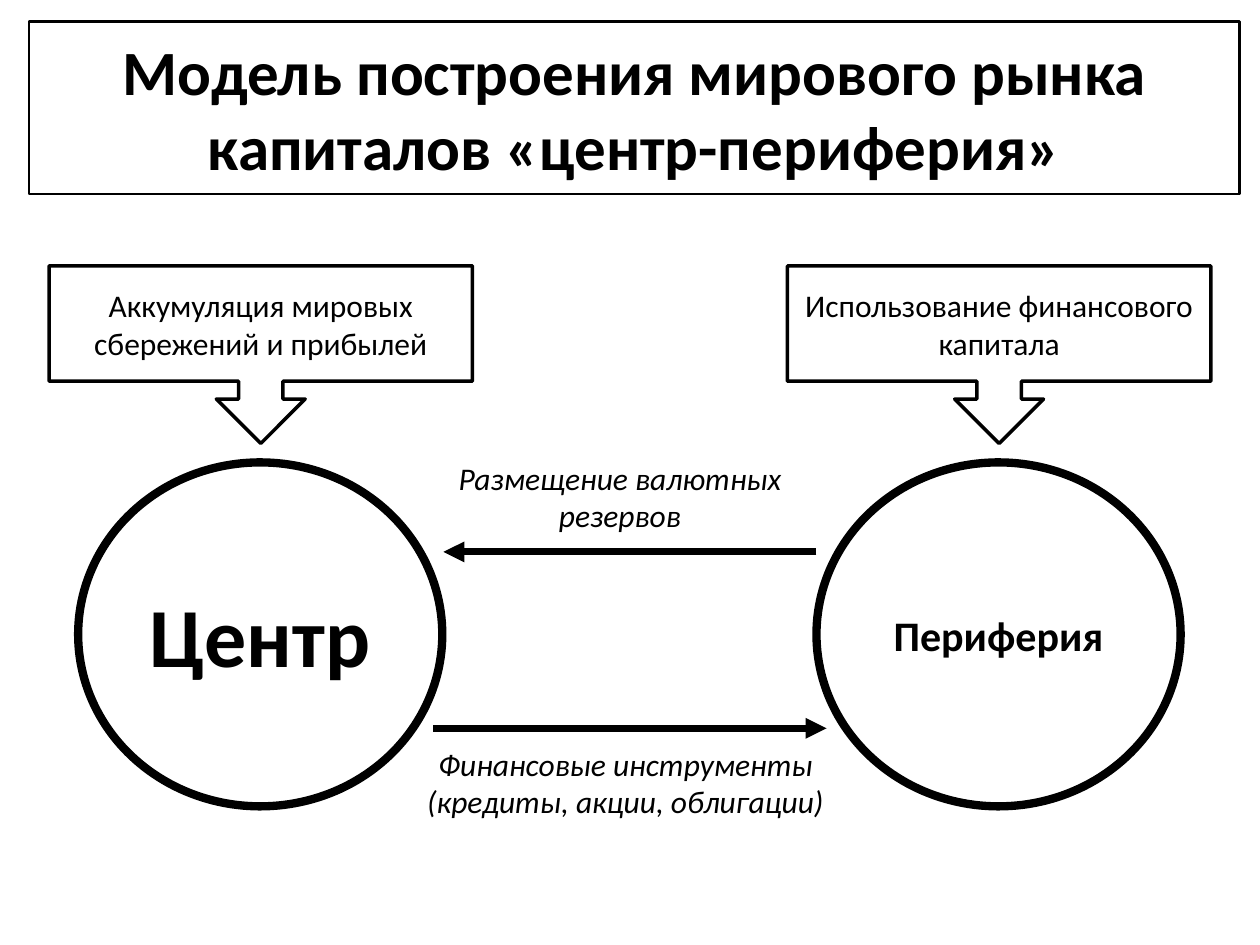
from pptx import Presentation
from pptx.dml.color import RGBColor
from pptx.enum.shapes import MSO_CONNECTOR, MSO_SHAPE
from pptx.enum.text import MSO_ANCHOR, MSO_AUTO_SIZE, PP_ALIGN
from pptx.oxml.ns import qn
from pptx.util import Emu, Pt
from lxml import etree

PX = 9144
FONT = "Calibri"
BLACK, WHITE = "000000", "FFFFFF"
TITLE_ONLY = 5
CENTER, MIDDLE, TOP = PP_ALIGN.CENTER, MSO_ANCHOR.MIDDLE, MSO_ANCHOR.TOP
GROW = MSO_AUTO_SIZE.SHAPE_TO_FIT_TEXT
NO_FIT = MSO_AUTO_SIZE.NONE
ELLIPSE, CALLOUT = MSO_SHAPE.OVAL, MSO_SHAPE.DOWN_ARROW_CALLOUT
STRAIGHT = MSO_CONNECTOR.STRAIGHT


def px(*values):
    return [Emu(v * PX) for v in values]


def rgb(value):
    return RGBColor.from_string(value)


class SlideBuilder:
    def __init__(self, prs):
        self.slide = prs.slides.add_slide(prs.slide_layouts[TITLE_ONLY])

    def set_text(self, sp, text, size, bold=False, italic=False, anchor=MIDDLE, fit=NO_FIT):
        tf = sp.text_frame
        tf.text = text
        tf.word_wrap = True
        tf.auto_size = fit
        tf.vertical_anchor = anchor
        p = tf.paragraphs[0]
        p.alignment = CENTER
        font = p.runs[0].font
        font.name, font.size = FONT, Pt(size)
        font.bold, font.italic = bold, italic
        font.color.rgb = rgb(BLACK)

    def outline(self, sp, width):
        sp.line.color.rgb = rgb(BLACK)
        sp.line.width = Pt(width)

    def title(self, box, text, size):
        sp = self.slide.shapes.title
        sp.left, sp.top, sp.width, sp.height = px(*box)
        self.outline(sp, 1.5)
        self.set_text(sp, text, size, bold=True)

    def shape(self, kind, box, line, text, size, bold=False):
        sp = self.slide.shapes.add_shape(kind, *px(*box))
        sp.shadow.inherit = False
        sp.fill.solid()
        sp.fill.fore_color.rgb = rgb(WHITE)
        self.outline(sp, line)
        self.set_text(sp, text, size, bold)

    def label(self, box, text, size):
        sp = self.slide.shapes.add_textbox(*px(*box))
        self.set_text(sp, text, size, italic=True, anchor=TOP, fit=GROW)

    def arrow(self, start, end, y, width):
        cxn = self.slide.shapes.add_connector(STRAIGHT, *px(start, y, end, y))
        self.outline(cxn, width)
        properties = cxn.element.spPr
        etree.SubElement(properties.find(qn("a:ln")), qn("a:tailEnd"), type="triangle")
        etree.SubElement(properties, qn("a:effectLst"))


def main():
    prs = Presentation()
    prs.slide_width, prs.slide_height = px(1000, 750)
    s = SlideBuilder(prs)
    s.title((23, 17, 961, 137),
            "Модель построения мирового рынка капиталов «центр-периферия»", 36)

    column_gap = 586
    columns = [
        ("Центр", 48, "Аккумуляция мировых сбережений и прибылей"),
        ("Периферия", 24, "Использование финансового капитала"),
    ]
    for i, (name, size, _) in enumerate(columns):
        s.shape(ELLIPSE, (62 + i * column_gap, 367, 289, 273), 4.75, name, size, bold=True)

    s.arrow(648, 352, 438, 4)
    s.arrow(344, 656, 578, 4)
    s.label((328, 359, 328, 71), "Размещение валютных резервов", 18)
    s.label((305, 586, 383, 71), "Финансовые инструменты (кредиты, акции, облигации)", 18)

    for i, (_, _, role) in enumerate(columns):
        s.shape(CALLOUT, (39 + i * column_gap, 211, 336, 141), 2, role, 18)

    prs.save("out.pptx")


if __name__ == "__main__":
    main()
